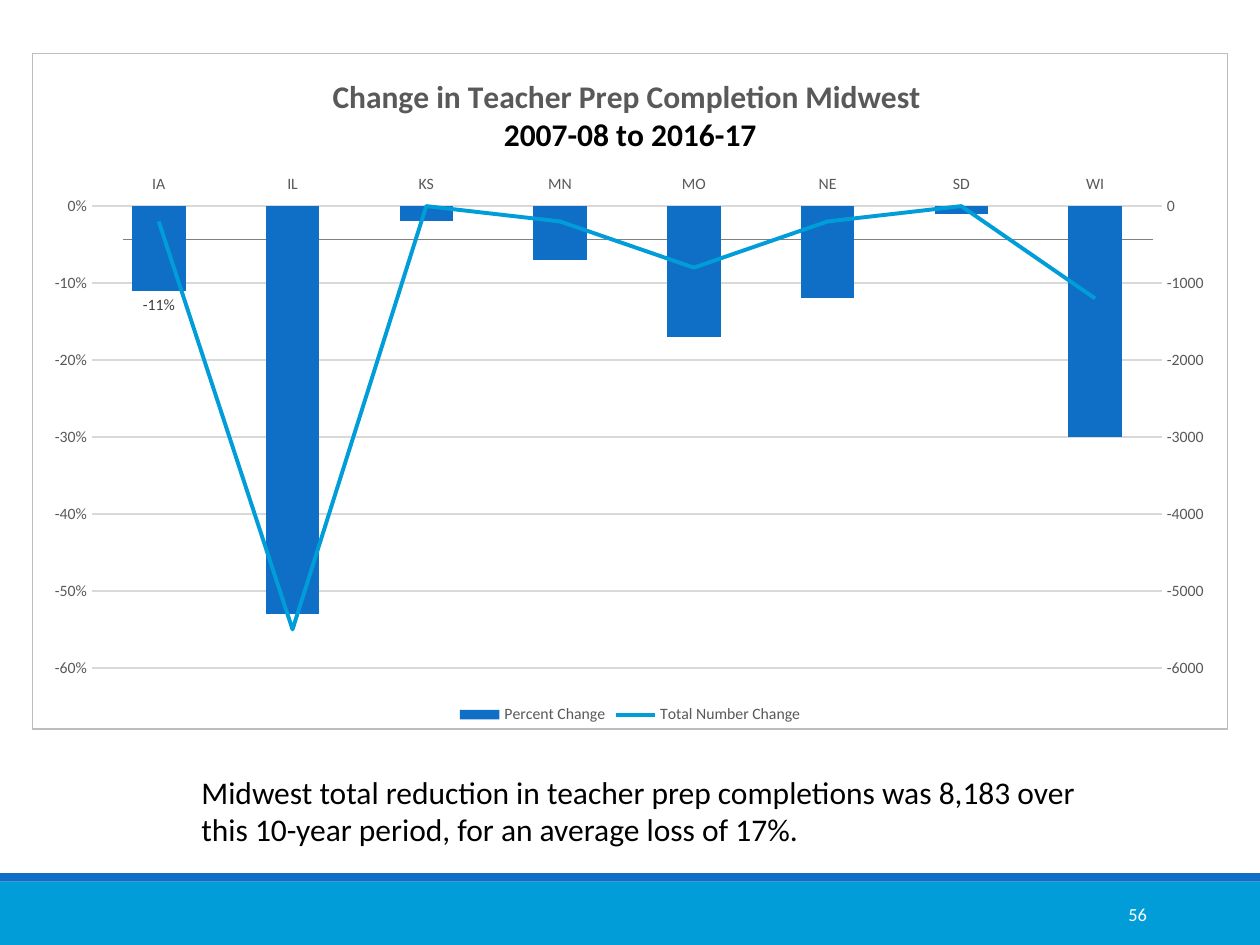
from lxml import etree
from pptx import Presentation
from pptx import util as u
from pptx.chart.data import CategoryChartData
from pptx.dml.color import RGBColor
from pptx.enum import chart as ch, shapes, text
from pptx.oxml import parse_xml
from pptx.oxml.ns import nsdecls, qn

HUES = {"sky": "009DD9", "blue": "0F6FC6", "rule": "808080", "grid": "D9D9D9",
        "edge": "BDBDBD", "grey": "595959", "dark": "404040",
        "black": "000000", "white": "FFFFFF"}
FACE = "Calibri"
STATES = ["IA", "IL", "KS", "MN", "MO", "NE", "SD", "WI"]
SHARE = [-0.11, -0.53, -0.02, -0.07, -0.17, -0.12, -0.01, -0.3]
COUNT = [-200, -5500, 0, -200, -800, -200, 0, -1200]
TITLE = [("Change in Teacher Prep Completion Midwest ", "grey"),
         ("2007-08 to 2016-17", "black")]
NOTE = ("Midwest total reduction in teacher prep completions was 8,183 over "
        "this 10-year period, for an average loss of 17%.")


def hue(name):
    return RGBColor.from_string(HUES[name])


def pen(font, size, color, bold=False):
    font.name, font.size, font.bold = FACE, u.Pt(size), bold
    font.color.rgb = hue(color)


def stroke(line, color, width):
    line.color.rgb = hue(color)
    line.width = u.Pt(width)


def xml(tag, body):
    return parse_xml(f'<c:{tag} {nsdecls("c", "a")}>{body}</c:{tag}>')


def place(x, y, size=None):
    """Return a manual chart layout in shares of the chart."""
    parts = [("xMode", "edge"), ("yMode", "edge"), ("x", x), ("y", y)]
    if size:
        parts = [("layoutTarget", "inner")] + parts + list(zip("wh", size))
    body = "".join(f'<c:{k} val="{v}"/>' for k, v in parts)
    return xml("layout", f"<c:manualLayout>{body}</c:manualLayout>")


def pair(chart):
    """Move the second series to a line on a right-hand axis."""
    bar = chart._chartSpace.find(".//" + qn("c:barChart"))
    ser = bar.findall(qn("c:ser"))[1]
    flip = ser.find(qn("c:invertIfNegative"))
    if flip is not None:
        ser.remove(flip)
    ser.find(qn("c:spPr")).addnext(xml("marker", '<c:symbol val="none"/>'))
    etree.SubElement(ser, qn("c:smooth")).set("val", "0")
    line = xml("lineChart", '<c:grouping val="standard"/><c:varyColors val="0"/>'
               '<c:marker val="1"/><c:axId val="501"/><c:axId val="502"/>')
    line.insert(2, ser)
    bar.addnext(line)
    base = '<c:scaling><c:orientation val="minMax"/></c:scaling>'
    look = ('<c:spPr><a:ln><a:noFill/></a:ln></c:spPr><c:txPr><a:bodyPr/><a:p><a:pPr>'
            f'<a:defRPr sz="900"><a:solidFill><a:srgbClr val="{HUES["grey"]}"/>'
            f'</a:solidFill><a:latin typeface="{FACE}"/></a:defRPr></a:pPr></a:p></c:txPr>')
    right = xml("valAx", f'<c:axId val="502"/>{base}<c:delete val="0"/>'
                '<c:axPos val="r"/><c:numFmt formatCode="General" sourceLinked="0"/>'
                '<c:majorTickMark val="none"/><c:minorTickMark val="none"/>'
                f'<c:tickLblPos val="nextTo"/>{look}'
                '<c:crossAx val="501"/><c:crosses val="max"/>')
    twin = xml("catAx", f'<c:axId val="501"/>{base}<c:delete val="1"/>'
               '<c:axPos val="b"/><c:crossAx val="502"/><c:crosses val="autoZero"/>')
    left = chart.value_axis._element
    left.addnext(right)
    right.addnext(twin)


class Deck:
    """Holds the file and current slide; boxes are shares of the slide."""

    def __init__(self):
        self.file = Presentation()
        self.file.slide_width, self.file.slide_height = u.Inches(10), u.Inches(7.5)
        self.slide = self.file.slides.add_slide(self.file.slide_layouts[6])

    def span(self, x, y, w, h):
        wide, high = self.file.slide_width, self.file.slide_height
        return [round(v) for v in (x * wide, y * high, w * wide, h * high)]

    def band(self, box, color):
        form = self.slide.shapes.add_shape(shapes.MSO_SHAPE.RECTANGLE, *self.span(*box))
        form.shadow.inherit = False
        form.fill.solid()
        form.fill.fore_color.rgb = hue(color)
        form.line.fill.background()

    def rule(self, x, y, end):
        line = self.slide.shapes.add_connector(
            shapes.MSO_CONNECTOR.STRAIGHT, *self.span(x, y, end, y))
        stroke(line.line, "rule", 0.5)
        etree.SubElement(line._element.spPr, qn("a:effectLst"))

    def words(self, box, copy, size, color, align=text.PP_ALIGN.LEFT,
              anchor=text.MSO_ANCHOR.TOP):
        frame = self.slide.shapes.add_textbox(*self.span(*box)).text_frame
        frame.word_wrap, frame.vertical_anchor = True, anchor
        para = frame.paragraphs[0]
        para.text, para.alignment = copy, align
        pen(para.font, size, color)

    def chart(self, box):
        data = CategoryChartData()
        data.categories = STATES
        data.add_series("Percent Change", SHARE, "0%")
        data.add_series("Total Number Change", COUNT, "General")
        chart = self.slide.shapes.add_chart(
            ch.XL_CHART_TYPE.COLUMN_CLUSTERED, *self.span(*box), data).chart
        pen(chart.font, 10, "black")
        self.title(chart)
        self.axes(chart)
        plot = chart.plots[0]
        plot.gap_width, plot.vary_by_categories = 150, False
        bars, trend = plot.series
        bars.invert_if_negative = False
        bars.format.fill.solid()
        bars.format.fill.fore_color.rgb = hue("blue")
        bars.data_labels.show_value = False
        label = bars.points[0].data_label
        pen(label.font, 9, "dark")
        label.position = ch.XL_LABEL_POSITION.OUTSIDE_END
        stroke(trend.format.line, "sky", 2.25)
        pair(chart)
        chart.has_legend = True
        chart.legend.position = ch.XL_LEGEND_POSITION.BOTTOM
        chart.legend.include_in_layout = False
        pen(chart.legend.font, 9, "grey")
        area = chart._chartSpace.find(qn("c:chart")).find(qn("c:plotArea"))
        for old in area.findall(qn("c:layout")):
            area.remove(old)
        area.insert(0, place(0.05, 0.226, (0.895, 0.684)))
        chart._chartSpace.find(qn("c:chart")).addnext(xml(
            "spPr", '<a:noFill/><a:ln w="9525"><a:solidFill>'
            f'<a:srgbClr val="{HUES["edge"]}"/></a:solidFill></a:ln>'))

    def title(self, chart):
        frame = chart.chart_title.text_frame
        for i, (copy, color) in enumerate(TITLE):
            para = frame.add_paragraph() if i else frame.paragraphs[0]
            run = para.add_run()
            run.text = copy
            pen(run.font, 18, color, True)
        head = chart.chart_title._element
        for old in head.findall(qn("c:layout")):
            head.remove(old)
        head.find(qn("c:tx")).addnext(place(0.248, 0.028))
        chart.chart_title.include_in_layout = False

    def axes(self, chart):
        for axis in (chart.category_axis, chart.value_axis):
            axis.major_tick_mark = axis.minor_tick_mark = ch.XL_TICK_MARK.NONE
            pen(axis.tick_labels.font, 9, "grey")
        chart.category_axis.tick_label_position = ch.XL_TICK_LABEL_POSITION.HIGH
        stroke(chart.category_axis.format.line, "grid", 0.75)
        value = chart.value_axis
        value.format.line.fill.background()
        value.has_major_gridlines = True
        stroke(value.major_gridlines.format.line, "grid", 0.75)
        value.tick_labels.number_format = "0%"
        value.tick_labels.number_format_is_linked = False


def main():
    deck = Deck()
    deck.band((0, 0.933, 1, 0.067), "sky")
    deck.band((0, 0.924, 1, 0.009), "blue")
    deck.rule(0.098, 0.253, 0.915)
    deck.words((0.812, 0.941, 0.108, 0.053), "56", 10.5, "white",
               text.PP_ALIGN.RIGHT, text.MSO_ANCHOR.MIDDLE)
    deck.chart((0.025, 0.056, 0.95, 0.716))
    deck.words((0.15, 0.811, 0.717, 0.095), NOTE, 18, "black")
    deck.file.save("out.pptx")


if __name__ == "__main__":
    main()
